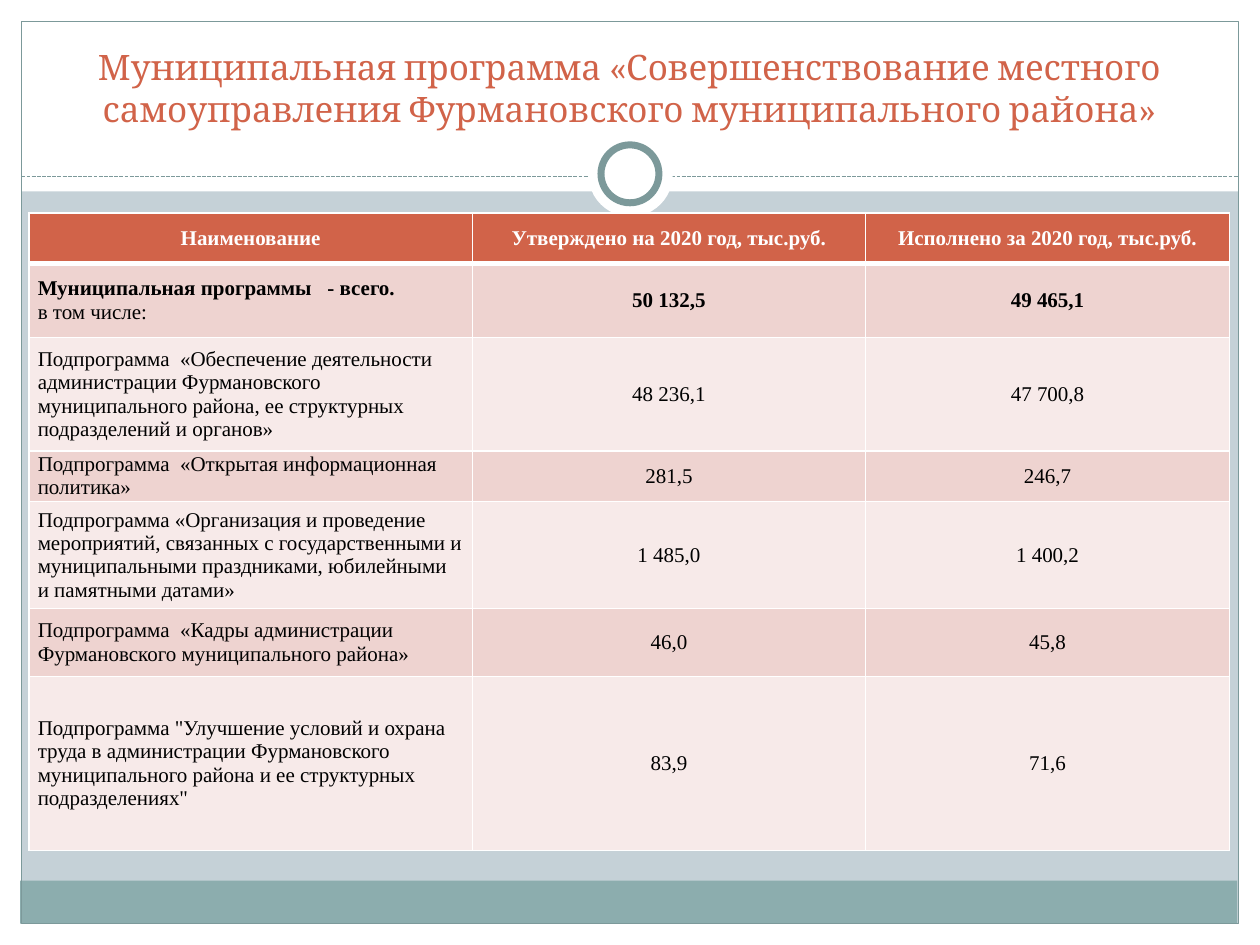
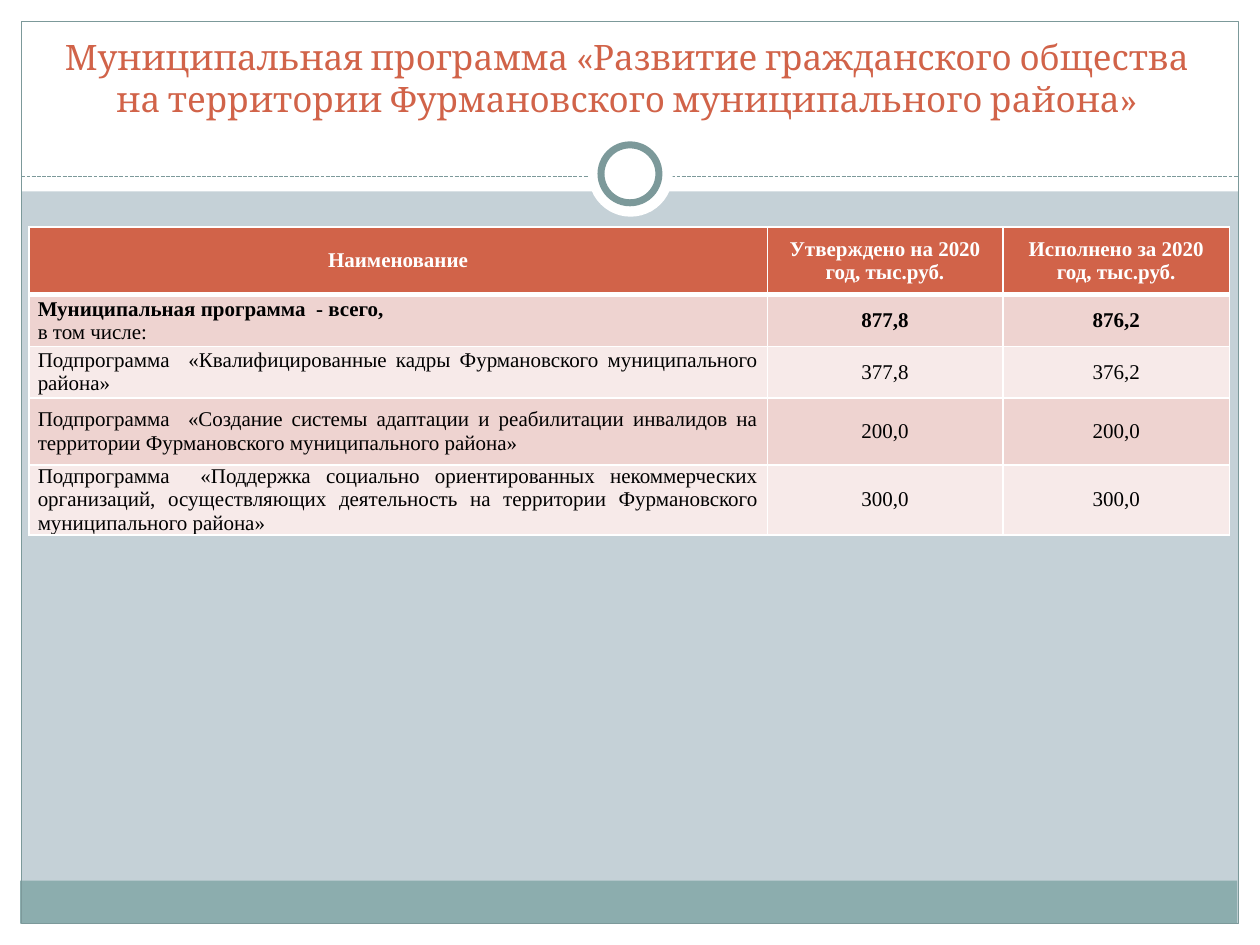
from lxml import etree
from pptx import Presentation
from pptx import util as u
from pptx.dml.color import RGBColor
from pptx.enum import dml, shapes, text
from pptx.oxml.ns import qn

PX = 9144
WHITE = RGBColor(0xFF, 0xFF, 0xFF)
BLACK = RGBColor(0x00, 0x00, 0x00)
MIST = RGBColor(0xC5, 0xD1, 0xD7)
TEAL = RGBColor(0x8C, 0xAD, 0xAE)
TEAL_DARK = RGBColor(0x7C, 0x99, 0x9A)
RUST = RGBColor(0xD1, 0x63, 0x49)
ROW_DARK = RGBColor(0xEE, 0xD3, 0xD0)
ROW_LIGHT = RGBColor(0xF7, 0xEA, 0xE9)

RECT = shapes.MSO_SHAPE.RECTANGLE
OVAL = shapes.MSO_SHAPE.OVAL
LEFT = text.PP_ALIGN.LEFT
CENTER = text.PP_ALIGN.CENTER
JUSTIFY = text.PP_ALIGN.JUSTIFY
MIDDLE = text.MSO_ANCHOR.MIDDLE

TITLE_FONT = {"name": "Cambria", "size": u.Pt(20), "bold": False}
CELL_FONT = {"name": "Times New Roman", "size": u.Pt(12)}
CELL_FORMAT = {"margin_left": 7 * PX, "margin_right": 7 * PX,
               "margin_top": 0, "margin_bottom": 0, "vertical_anchor": MIDDLE}
TITLE_FRAME = {"word_wrap": True, "auto_size": text.MSO_AUTO_SIZE.NONE,
               "vertical_anchor": text.MSO_ANCHOR.BOTTOM}

HEADER = ("Наименование", "Утверждено на 2020 год, тыс.руб.", "Исполнено за 2020 год, тыс.руб.")

GOVERNANCE = [
    HEADER,
    ("Муниципальная программы   - всего.\nв том числе:", "50 132,5", "49 465,1"),
    ("Подпрограмма  «Обеспечение деятельности администрации Фурмановского муниципального района, "
     "ее структурных подразделений и органов»", "48 236,1", "47 700,8"),
    ("Подпрограмма  «Открытая информационная политика»", "281,5", "246,7"),
    ("Подпрограмма «Организация и проведение мероприятий, связанных с государственными "
     "и муниципальными праздниками, юбилейными и памятными датами»", "1 485,0", "1 400,2"),
    ("Подпрограмма  «Кадры администрации Фурмановского муниципального района»", "46,0", "45,8"),
    ('Подпрограмма "Улучшение условий и охрана труда в администрации Фурмановского '
     'муниципального района и ее структурных подразделениях"', "83,9", "71,6"),
]

CIVIL_SOCIETY = [
    HEADER,
    ("Муниципальная программа  - всего,\nв том числе:", "877,8", "876,2"),
    ("Подпрограмма  «Квалифицированные кадры Фурмановского муниципального района»",
     "377,8", "376,2"),
    ("Подпрограмма  «Создание системы адаптации и реабилитации инвалидов на территории "
     "Фурмановского муниципального района»", "200,0", "200,0"),
    ("Подпрограмма  «Поддержка социально ориентированных некоммерческих организаций, "
     "осуществляющих деятельность на территории Фурмановского муниципального района»",
     "300,0", "300,0"),
]


def apply(target, values):
    for name, value in values.items():
        setattr(target, name, value)


class Deck:
    def __init__(self):
        self.prs = Presentation()
        apply(self.prs, {"slide_width": 1000 * PX, "slide_height": 750 * PX})
        self.layout = self.prs.slide_layouts[5]
        for ph in list(self.layout.placeholders):
            if ph.placeholder_format.type != shapes.PP_PLACEHOLDER.TITLE:
                self.layout.shapes.element.remove(ph.element)
        fill = self.layout.background.fill
        fill.solid()
        fill.fore_color.rgb = MIST
        self.s = None

    def slide(self):
        self.s = self.prs.slides.add_slide(self.layout)

    def shape(self, kind, box, fill=None, line=None, weight=0.75):
        sp = self.s.shapes.add_shape(kind, *(v * PX for v in box))
        sp.shadow.inherit = False
        if fill is None:
            sp.fill.background()
        else:
            sp.fill.solid()
            sp.fill.fore_color.rgb = fill
        if line is None:
            sp.line.fill.background()
        else:
            sp.line.color.rgb = line
            sp.line.width = u.Pt(weight)
        return sp

    def dashed_line(self, x1, x2, y):
        line = self.s.shapes.add_connector(
            shapes.MSO_CONNECTOR.STRAIGHT, x1 * PX, y * PX, x2 * PX, y * PX)
        line.line.color.rgb = TEAL_DARK
        apply(line.line, {"width": u.Pt(0.75), "dash_style": dml.MSO_LINE.SQUARE_DOT})
        etree.SubElement(line.element.spPr, qn("a:effectLst"))
        return line

    def frame(self):
        parts = [self.shape(RECT, box, WHITE) for box in (
            (0, 733, 1000, 17), (0, 0, 1000, 152), (0, 0, 17, 750), (983, 0, 17, 750))]
        parts += [
            self.shape(RECT, (16, 699, 966, 34), TEAL),
            self.shape(RECT, (17, 17, 966, 716), line=TEAL_DARK),
            self.dashed_line(17, 983, 140),
            self.shape(OVAL, (467, 105, 67, 67), WHITE),
            self.shape(OVAL, (477, 115, 46, 46), WHITE, TEAL_DARK, 4),
        ]
        for part in parts:
            self.layout.shapes.element.append(part.element)

    def add_text(self, p, content, font, color, align):
        p.alignment = align
        r = p.add_run()
        r.text = content
        apply(r.font, font)
        r.font.color.rgb = color

    def title(self, content, box):
        sp = self.s.shapes.title
        apply(sp, dict(zip(("left", "top", "width", "height"), (v * PX for v in box))))
        apply(sp.text_frame, TITLE_FRAME)
        self.add_text(sp.text_frame.paragraphs[0], content, TITLE_FONT, RUST, CENTER)

    def borders(self, cell, row):
        weights = {"L": 1, "R": 1, "T": 3 if row == 1 else 1, "B": 3 if row == 0 else 1}
        tc_pr = cell._tc.get_or_add_tcPr()
        for side, weight in weights.items():
            ln = etree.SubElement(tc_pr, qn(f"a:ln{side}"), w=str(u.Pt(weight)))
            solid = etree.SubElement(ln, qn("a:solidFill"))
            etree.SubElement(solid, qn("a:srgbClr"), val=str(WHITE))

    def cell(self, cell, content, row, align):
        apply(cell, CELL_FORMAT)
        self.borders(cell, row)
        cell.fill.solid()
        cell.fill.fore_color.rgb = RUST if row == 0 else ROW_DARK if row % 2 else ROW_LIGHT
        tf = cell.text_frame
        for i, line in enumerate(content.split("\n")):
            p = tf.add_paragraph() if i else tf.paragraphs[0]
            font = {**CELL_FONT, "bold": row < 2 and i == 0}
            self.add_text(p, line, font, BLACK if row else WHITE, align)

    def table(self, rows, top, widths, heights, name_align):
        box = (23, top, sum(widths), sum(heights))
        table = self.s.shapes.add_table(
            len(rows), len(widths), *(v * PX for v in box)).table
        for column, width in zip(table.columns, widths):
            column.width = width * PX
        for i, (row, height) in enumerate(zip(rows, heights)):
            table.rows[i].height = height * PX
            for j, content in enumerate(row):
                align = name_align if i and j == 0 else CENTER
                self.cell(table.cell(i, j), content, i, align)


def main():
    deck = Deck()
    deck.slide()
    deck.frame()
    deck.title("Муниципальная программа «Совершенствование местного самоуправления "
               "Фурмановского муниципального района»", (33, 25, 933, 83))
    deck.table(GOVERNANCE, 169, (352, 312, 289), (40, 59, 90, 40, 85, 54, 138), LEFT)

    deck.slide()
    deck.title("Муниципальная программа «Развитие гражданского общества на территории "
               "Фурмановского муниципального района»", (31, 47, 933, 53))
    deck.table(CIVIL_SOCIETY, 180, (586, 187, 180), (54, 41, 41, 53, 41), JUSTIFY)

    deck.prs.save("out.pptx")


if __name__ == "__main__":
    main()
